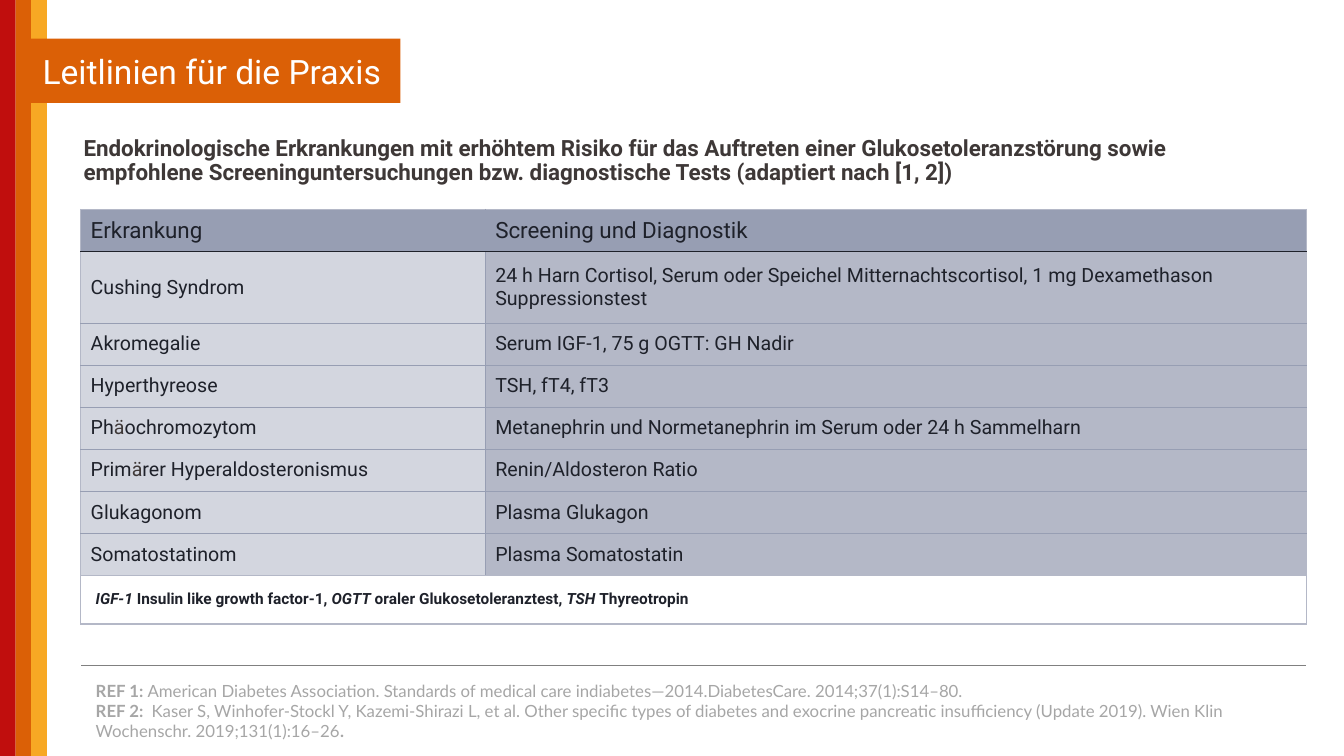
from collections import namedtuple

from lxml.etree import SubElement
from pptx import Presentation
from pptx.dml.color import RGBColor
from pptx.enum.shapes import MSO_SHAPE
from pptx.enum.text import MSO_ANCHOR, PP_ALIGN
from pptx.oxml.ns import qn
from pptx.util import Inches, Pt

WIDE, HIGH = 13.33, 7.5
RED, ORANGE, YELLOW, WHITE = "C00E0D", "DB6006", "F7A824", "FFFFFF"
INK, BROWN, GREY, RULE = "1E212A", "3E3837", "A6A6A6", "808080"
DARK, MID, LIGHT = "979EB3", "B4B8C7", "D3D6DF"

# Left, top, width and height in percent of the slide
Box = namedtuple("Box", "x y w h")
Font = namedtuple("Font", "name size color bold italic", defaults=(False, False))

HEAD = Font("Roboto", 16, INK)
BODY = Font("Roboto", 14, INK)
UMLAUT = BODY._replace(color=BROWN)
NOTE = Font("Roboto", 11, INK, True)
TERM = NOTE._replace(italic=True)
REF = Font("Lato", 12, GREY)
LABEL = REF._replace(bold=True)

TESTS = [
    ("Erkrankung", "Screening und Diagnostik"),
    ("Cushing Syndrom", "24 h Harn Cortisol, Serum oder Speichel Mitternachtscortisol, "
                        "1 mg Dexamethason Suppressionstest"),
    ("Akromegalie", "Serum IGF-1, 75 g OGTT: GH Nadir"),
    ("Hyperthyreose", "TSH, fT4, fT3"),
    ("Phäochromozytom", "Metanephrin und Normetanephrin im Serum oder 24 h Sammelharn"),
    ("Primärer Hyperaldosteronismus", "Renin/Aldosteron Ratio"),
    ("Glukagonom", "Plasma Glukagon"),
    ("Somatostatinom", "Plasma Somatostatin"),
]
NOTES = [[("IGF-1", TERM), (" Insulin like growth factor-1, ", NOTE),
          ("OGTT", TERM), (" oraler Glukosetoleranztest, ", NOTE),
          ("TSH ", TERM), ("Thyreotropin", NOTE)]]
REFS = [
    [("REF 1: ", LABEL),
     ("American Diabetes Association. Standards of medical care indiabetes—2014."
      "DiabetesCare. 2014;37(1):S14–80.", REF)],
    [("REF 2:  ", LABEL),
     ("Kaser S, Winhofer-Stockl Y, Kazemi-Shirazi L, et al. Other specific types of "
      "diabetes and exocrine pancreatic insufficiency (Update 2019). "
      "Wien Klin Wochenschr. 2019;131(1):16–26", REF),
     (".", LABEL)],
]


def paint(hue):
    return RGBColor.from_string(hue)


def place(box):
    """Turn a box in percent into slide lengths."""
    return (Inches(box.x * WIDE / 100), Inches(box.y * HIGH / 100),
            Inches(box.w * WIDE / 100), Inches(box.h * HIGH / 100))


def write(frame, lines):
    """Fill a text frame with paragraphs, each a list of (text, font) runs."""
    for i, line in enumerate(lines):
        para = frame.add_paragraph() if i else frame.paragraphs[0]
        for text, font in line:
            run = para.add_run()
            run.text = text
            run.font.name = font.name
            run.font.size = Pt(font.size)
            run.font.bold = font.bold
            run.font.italic = font.italic
            run.font.color.rgb = paint(font.color)


def block(slide, box, hue):
    shape = slide.shapes.add_shape(MSO_SHAPE.RECTANGLE, *place(box))
    shape.shadow.inherit = False
    shape.fill.solid()
    shape.fill.fore_color.rgb = paint(hue)
    shape.line.fill.background()
    return shape


def stripes(slide, box):
    hues = (RED, ORANGE, YELLOW)
    step = box.w / len(hues)
    for i, hue in enumerate(hues):
        block(slide, box._replace(x=box.x + i * step, w=step), hue)


def title(slide, box):
    frame = block(slide, box, ORANGE).text_frame
    frame.vertical_anchor = MSO_ANCHOR.MIDDLE
    frame.word_wrap = True
    write(frame, [[("Leitlinien für die Praxis", Font("Roboto", 24, WHITE))]])
    frame.paragraphs[0].alignment = PP_ALIGN.CENTER


def heading(slide, box):
    frame = slide.shapes.add_textbox(*place(box)).text_frame
    frame.word_wrap = True
    write(frame, [[("Endokrinologische Erkrankungen mit erhöhtem Risiko für das Auftreten "
                    "einer Glukosetoleranzstörung sowie empfohlene Screeninguntersuchungen "
                    "bzw. diagnostische Tests (adaptiert nach [1, 2])",
                    Font("Roboto", 16, BROWN, True))]])
    frame.paragraphs[0].line_spacing = 0.9


def grid(slide, box, rows, cols):
    table = slide.shapes.add_table(rows, cols, *place(box)).table
    table.first_row = table.horz_banding = False
    return table


def edge(cell, left, right, top, bottom):
    """Draw the four cell borders; call it before setting the fill."""
    props = cell._tc.get_or_add_tcPr()
    for side, hue in zip("LRTB", (left, right, top, bottom)):
        line = SubElement(props, qn(f"a:ln{side}"), w=str(Pt(1)))
        fill = SubElement(line, qn("a:solidFill"))
        SubElement(fill, qn("a:srgbClr"), val=hue)


def split(text):
    """Cut a name into runs so that its umlaut gets its own colour."""
    parts = text.partition("ä")
    return [(part, font) for part, font in zip(parts, (BODY, UMLAUT, BODY)) if part]


def tests(slide, box):
    table = grid(slide, box, len(TESTS), 2)
    for col, share in zip(table.columns, (0.33, 0.67)):
        col.width = Inches(box.w * share * WIDE / 100)
    last = len(TESTS) - 1
    tall = 0.196
    for r, pair in enumerate(TESTS):
        share = tall if r == 1 else (1 - tall) / last
        table.rows[r].height = Inches(box.h * share * HIGH / 100)
        top = {0: MID, 1: INK}.get(r, DARK)
        bottom = {0: INK, last: MID}.get(r, DARK)
        for c, text in enumerate(pair):
            cell = table.cell(r, c)
            edge(cell, DARK if c else MID, MID if c else DARK, top, bottom)
            cell.fill.solid()
            cell.fill.fore_color.rgb = paint((LIGHT, MID)[c] if r else DARK)
            cell.vertical_anchor = MSO_ANCHOR.MIDDLE
            if r == 0:
                runs = [(text, HEAD)]
            else:
                runs = [(text, BODY)] if c else split(text)
            write(cell.text_frame, [runs])


def panel(slide, box, lines, sides):
    """Place a one-cell table with wide margins."""
    cell = grid(slide, box, 1, 1).cell(0, 0)
    edge(cell, *sides)
    cell.fill.background()
    cell.margin_left = cell.margin_right = Inches(0.15)
    cell.margin_top = cell.margin_bottom = Inches(0.15)
    write(cell.text_frame, lines)


def main():
    deck = Presentation()
    deck.slide_width, deck.slide_height = Inches(WIDE), Inches(HIGH)
    slide = deck.slides.add_slide(deck.slide_layouts[6])
    slide.background.fill.solid()
    slide.background.fill.fore_color.rgb = paint(WHITE)
    body = Box(6, 27.7, 91.22, 48.4)
    stripes(slide, Box(0, 0, 3.48, 100))
    title(slide, Box(1.73, 5.1, 28.06, 8.5))
    tests(slide, body)
    heading(slide, Box(5.48, 17.5, 89.12, 6.4))
    panel(slide, body._replace(y=88, h=12), REFS, (WHITE, WHITE, RULE, WHITE))
    panel(slide, body._replace(y=body.y + body.h, h=6.4), NOTES, (MID,) * 4)
    deck.save("out.pptx")


if __name__ == "__main__":
    main()
